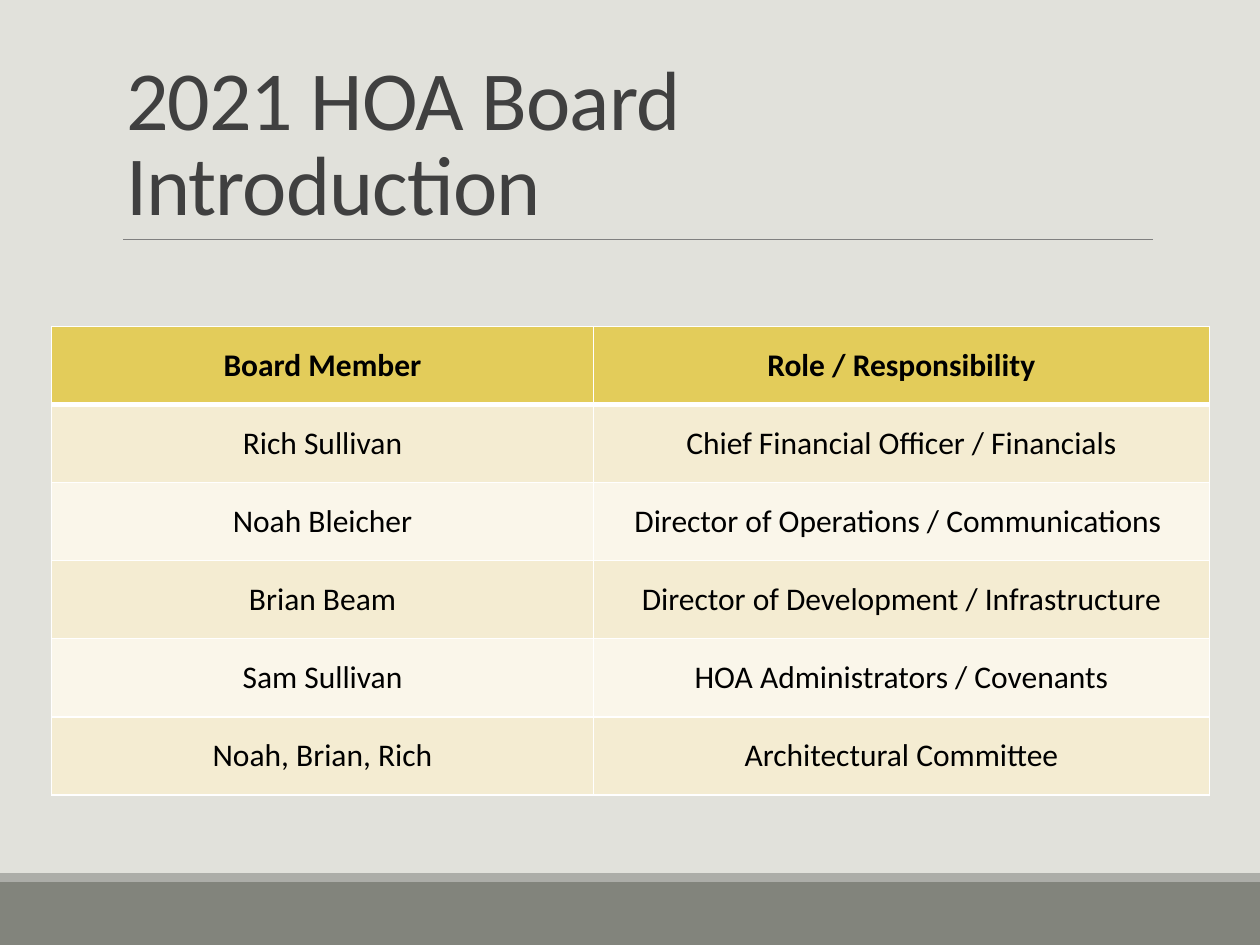
import pptx
import pptx.util
import pptx.dml.color
import pptx.enum.shapes
import pptx.enum.text
import pptx.oxml
import pptx.oxml.ns

Inches, Pt = pptx.util.Inches, pptx.util.Pt
RGBColor = pptx.dml.color.RGBColor
ANCHOR = pptx.enum.text.MSO_ANCHOR

# Content
TITLE = "2021 HOA Board\vIntroduction"
ROWS = [
    ("Board Member", "Role / Responsibility"),
    ("Rich Sullivan", "Chief Financial Officer / Financials"),
    ("Noah Bleicher", "Director of Operations / Communications "),
    ("Brian Beam", "Director of Development / Infrastructure"),
    ("Sam Sullivan", "HOA Administrators / Covenants"),
    ("Noah, Brian, Rich", "Architectural Committee"),
]

# Style
FONT = "Calibri"
BACKGROUND = RGBColor(0xE1, 0xE1, 0xDB)
FOOTER = RGBColor(0x82, 0x84, 0x7C)
FOOTER_EDGE = RGBColor(0xAC, 0xAD, 0xA8)
RULE = RGBColor(0x80, 0x80, 0x80)
TITLE_INK = RGBColor(0x40, 0x40, 0x40)
BLACK = RGBColor(0, 0, 0)
WHITE = RGBColor(0xFF, 0xFF, 0xFF)
HEADER = RGBColor(0xE3, 0xCC, 0x5A)
BANDS = (RGBColor(0xFA, 0xF6, 0xEA), RGBColor(0xF4, 0xEC, 0xD2))

# Layout in inches
W, H = 10, 7.5
FOOTER_H, EDGE_H = 0.5, 0.07
TITLE_RIGHT, TITLE_BOTTOM = 9.15, 1.9
TABLE_X, TABLE_Y = 0.41, 2.59
COLUMNS, ROW_H = (4.3, 4.89), 0.62


def add_band(slide, top, height, color):
    sp = slide.shapes.add_shape(pptx.enum.shapes.MSO_SHAPE.RECTANGLE, 0,
                                Inches(top), Inches(W), Inches(height))
    sp.shadow.inherit = False
    sp.fill.solid()
    sp.fill.fore_color.rgb = color
    sp.line.fill.background()


def style_font(r, size, color, bold=False):
    r.font.name, r.font.size, r.font.bold = FONT, Pt(size), bold
    r.font.color.rgb = color


def set_borders(cell, widths):
    """Put white borders before the cell's fill, in schema order."""
    for i, (side, width) in enumerate(widths.items()):
        ln = pptx.oxml.parse_xml(
            f'<a:ln{side} {pptx.oxml.ns.nsdecls("a")} w="{Pt(width)}">'
            f'<a:solidFill><a:srgbClr val="{WHITE}"/></a:solidFill></a:ln{side}>')
        cell._tc.get_or_add_tcPr().insert(i, ln)


prs = pptx.Presentation()
prs.slide_width, prs.slide_height = Inches(W), Inches(H)
s = prs.slides.add_slide(prs.slide_layouts[5])
s.background.fill.solid()
s.background.fill.fore_color.rgb = BACKGROUND

# Footer bands
add_band(s, H - FOOTER_H, FOOTER_H, FOOTER)
add_band(s, H - FOOTER_H - EDGE_H, EDGE_H, FOOTER_EDGE)

# Rule under the title
rule = s.shapes.add_connector(pptx.enum.shapes.MSO_CONNECTOR.STRAIGHT,
                              Inches(0.98), Inches(TITLE_BOTTOM),
                              Inches(TITLE_RIGHT), Inches(TITLE_BOTTOM))
rule.line.color.rgb, rule.line.width = RULE, Pt(0.5)
rule._element.spPr.append(
    pptx.oxml.parse_xml(f'<a:effectLst {pptx.oxml.ns.nsdecls("a")}/>'))

# Title
title = s.shapes.title
title.left, title.top = Inches(0.9), Inches(0.31)
title.width = Inches(TITLE_RIGHT) - title.left
title.height = Inches(TITLE_BOTTOM) - title.top
tf = title.text_frame
tf.word_wrap, tf.vertical_anchor = True, ANCHOR.BOTTOM
tf.auto_size = pptx.enum.text.MSO_AUTO_SIZE.NONE
p = tf.paragraphs[0]
p.text = TITLE
p.alignment, p.line_spacing = pptx.enum.text.PP_ALIGN.LEFT, 0.85
for r in p.runs:
    style_font(r, 48, TITLE_INK)
    r.font._element.set("spc", "-50")

# Board table
table = s.shapes.add_table(len(ROWS), len(COLUMNS), Inches(TABLE_X), Inches(TABLE_Y),
                           Inches(sum(COLUMNS)), Inches(ROW_H * len(ROWS))).table
for column, width in zip(table.columns, COLUMNS):
    column.width = Inches(width)
for i, texts in enumerate(ROWS):
    table.rows[i].height = Inches(ROW_H)
    for j, text in enumerate(texts):
        cell = table.cell(i, j)
        cell.vertical_anchor = ANCHOR.MIDDLE
        cell.fill.solid()
        cell.fill.fore_color.rgb = BANDS[i % 2] if i else HEADER
        set_borders(cell, {"L": 1, "R": 1, "T": 3 if i == 1 else 1, "B": 1 if i else 3})
        p = cell.text_frame.paragraphs[0]
        p.text = text
        p.alignment = pptx.enum.text.PP_ALIGN.CENTER
        style_font(p.runs[0], 18, BLACK, bold=i == 0)

prs.save("out.pptx")
